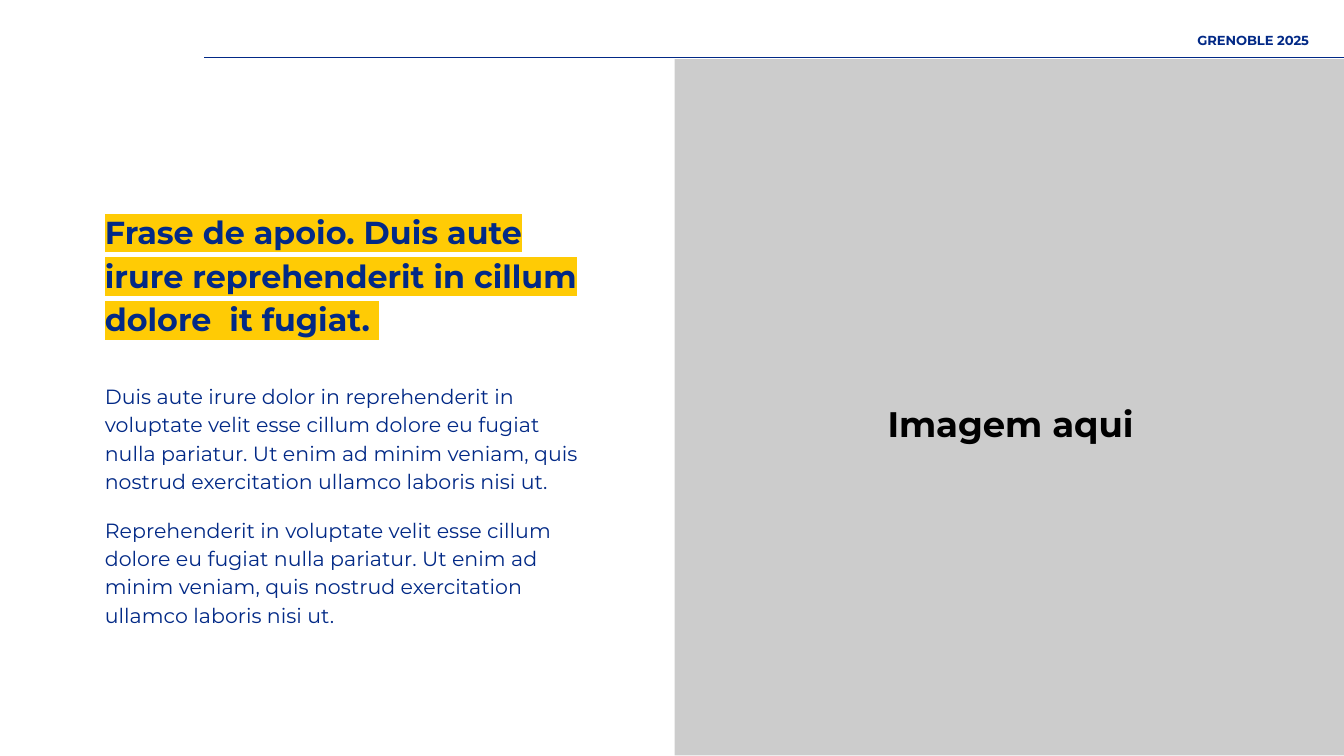
from dataclasses import dataclass

from lxml.etree import SubElement
from pptx import Presentation
from pptx.dml.color import RGBColor
from pptx.enum.shapes import MSO_CONNECTOR as Connector, MSO_SHAPE as Shape
from pptx.enum.text import MSO_ANCHOR as Anchor, MSO_AUTO_SIZE as AutoSize, PP_ALIGN as Align
from pptx.oxml.ns import qn
from pptx.util import Inches, Pt


@dataclass(frozen=True)
class Theme:
    font: str = "Montserrat"
    navy: str = "022986"
    yellow: str = "FFCB05"
    gray: str = "CCCCCC"
    black: str = "000000"
    caption: int = 19
    headline: int = 17
    body: int = 11
    header: int = 7
    leading: float = 1.15


THEME = Theme()

HEADLINE = "Frase de apoio. Duis aute irure reprehenderit in cillum dolore  it fugiat. "
BODY = [
    "Duis aute irure dolor in reprehenderit in voluptate velit esse cillum dolore eu fugiat "
    "nulla pariatur. Ut enim ad minim veniam, quis nostrud exercitation ullamco laboris nisi ut.",
    "Reprehenderit in voluptate velit esse cillum dolore eu fugiat nulla pariatur. "
    "Ut enim ad minim veniam, quis nostrud exercitation ullamco laboris nisi ut.",
]


def place(shape, left, top, width, height):
    shape.left, shape.top = Inches(left), Inches(top)
    shape.width, shape.height = Inches(width), Inches(height)


def write(shape, texts, size, color=THEME.navy, bold=False, align=Align.LEFT,
          leading=1.0, gap=0, left_inset=0, right_inset=0,
          fit=AutoSize.SHAPE_TO_FIT_TEXT):
    frame = shape.text_frame
    frame.word_wrap = True
    frame.auto_size = fit
    frame.vertical_anchor = Anchor.TOP
    frame.margin_left, frame.margin_right = Inches(left_inset), Inches(right_inset)
    frame.margin_top = frame.margin_bottom = Inches(0.1)
    frame.text = "\n".join(texts)
    for index, paragraph in enumerate(frame.paragraphs):
        properties = paragraph._p.get_or_add_pPr()
        properties.set("marL", "0")
        properties.set("indent", "0")
        SubElement(properties, qn("a:buNone"))
        paragraph.alignment = align
        paragraph.line_spacing = leading
        paragraph.space_before = Pt(gap if index else 0)
        paragraph.space_after = Pt(0)
        font = paragraph.font
        font.name, font.size, font.bold = THEME.font, Pt(size), bold
        font.color.rgb = RGBColor.from_string(color)


def highlight(shape, color):
    for paragraph in shape.text_frame.paragraphs:
        for run in paragraph.runs:
            marker = SubElement(run._r.get_or_add_rPr(), qn("a:highlight"))
            SubElement(marker, qn("a:srgbClr"), val=color)


def add_label(slide, box, text, size, **style):
    label = slide.shapes.add_textbox(*map(Inches, box))
    write(label, [text], size, bold=True, **style)


def add_panel(slide, box, color):
    panel = slide.shapes.add_shape(Shape.RECTANGLE, *map(Inches, box))
    panel.shadow.inherit = False
    panel.fill.solid()
    panel.fill.fore_color.rgb = RGBColor.from_string(color)
    panel.line.fill.background()


def add_rule(slide, left, right, y):
    rule = slide.shapes.add_connector(
        Connector.STRAIGHT, Inches(left), Inches(y), Inches(right), Inches(y))
    rule.line.color.rgb = RGBColor.from_string(THEME.navy)
    rule.line.width = Pt(0.75)
    SubElement(rule._element.spPr, qn("a:effectLst"))


def main():
    deck = Presentation()
    deck.slide_width = Inches(10)
    deck.slide_height = deck.slide_width * 9 // 16
    slide = deck.slides.add_slide(deck.slide_layouts[1])
    headline, body = slide.placeholders

    add_panel(slide, (5.02, 0.44, 5.01, 5.18), THEME.gray)
    add_label(slide, (6.19, 2.89, 2.66, 0.52), "Imagem aqui", THEME.caption,
              color=THEME.black, align=Align.CENTER, left_inset=0.1, right_inset=0.1)

    add_rule(slide, 1.52, 10.04, 0.43)
    add_label(slide, (6.63, 0.14, 3.11, 0.54), "GRENOBLE 2025", THEME.header,
              align=Align.RIGHT, fit=AutoSize.NONE)

    place(headline, 0.78, 1.44, 3.55, 1.15)
    write(headline, [HEADLINE], THEME.headline, bold=True, leading=THEME.leading)
    highlight(headline, THEME.yellow)

    place(body, 0.78, 2.73, 3.72, 2.03)
    write(body, BODY, THEME.body, leading=THEME.leading, gap=11, right_inset=0.1)

    deck.save("out.pptx")


if __name__ == "__main__":
    main()
